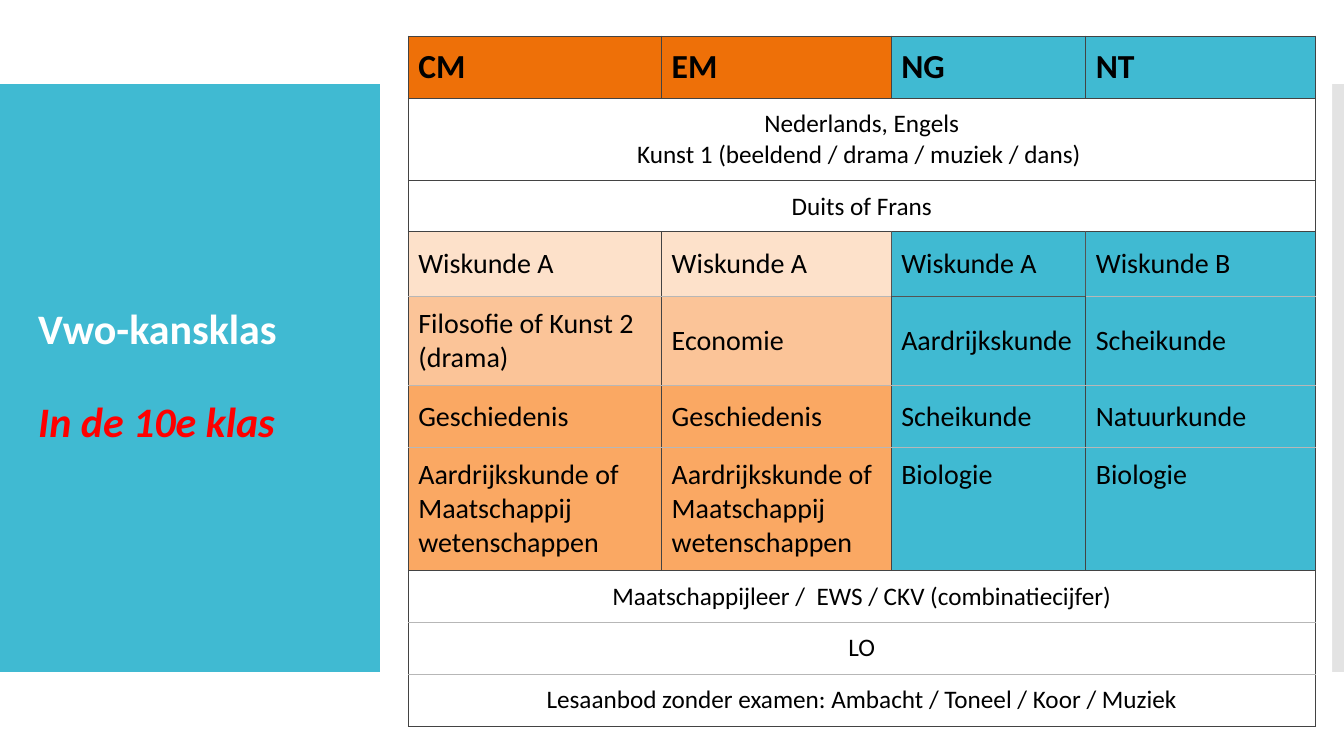
from lxml import etree
from pptx import Presentation
from pptx.dml.color import RGBColor
from pptx.enum.shapes import MSO_SHAPE
from pptx.enum.text import MSO_ANCHOR, MSO_AUTO_SIZE, PP_ALIGN
from pptx.oxml.ns import qn
from pptx.util import Pt

RECTANGLE = MSO_SHAPE.RECTANGLE
TOP, MIDDLE = MSO_ANCHOR.TOP, MSO_ANCHOR.MIDDLE
LEFT, CENTER = PP_ALIGN.LEFT, PP_ALIGN.CENTER
NO_AUTOFIT = MSO_AUTO_SIZE.NONE

DARK, SOFT, PALE = "434343", "545454", "B7B7B7"
TEAL = "40BAD2"


def paint(fill, color, opacity=100):
    fill.solid()
    fill.fore_color.rgb = RGBColor.from_string(color)
    if opacity < 100:
        rgb = fill._xPr.find(".//" + qn("a:srgbClr"))
        etree.SubElement(rgb, qn("a:alpha"), val=str(opacity * 1000))


def write(paragraph, text, size=20, color="000000", bold=False, italic=False, align=LEFT):
    paragraph.alignment = align
    run = paragraph.add_run()
    run.text = text
    run.font.name = "Calibri"
    run.font.size = Pt(size)
    run.font.bold = bold
    run.font.italic = italic
    run.font.color.rgb = RGBColor.from_string(color)


prs = Presentation()
prs.slide_width, prs.slide_height = Pt(960), Pt(540)
slide = prs.slides.add_slide(prs.slide_layouts[5])

panels = [
    (0, 60, 271.3, 420, TEAL, 100),
    (930, 60, 30, 420, "C8C8C8", 50),
    (876, 43, 75.6, 461.5, "FFFFFF", 100),
]
for left, top, width, height, color, opacity in panels:
    panel = slide.shapes.add_shape(RECTANGLE, Pt(left), Pt(top), Pt(width), Pt(height))
    panel.shadow.inherit = False
    panel.line.fill.background()
    paint(panel.fill, color, opacity)

title = slide.shapes.title
title.left, title.top, title.width, title.height = Pt(20), Pt(88.5), Pt(232), Pt(362)
slide.shapes._spTree.append(title.element)
heading = title.text_frame
heading.word_wrap = True
heading.auto_size = NO_AUTOFIT
heading.vertical_anchor = MIDDLE
class_name, class_year = heading.paragraphs[0], heading.add_paragraph()
write(class_name, "Vwo-kansklas", size=30, color="FFFFFF", bold=True)
write(class_year, "In de 10e klas", size=30, color="FF0000", bold=True, italic=True)
class_name.line_spacing = class_year.line_spacing = 0.9
class_year.space_before = Pt(34)

subjects = [
    ["CM", "EM", "NG", "NT"],
    ["Nederlands, Engels\nKunst 1 (beeldend / drama / muziek / dans) "],
    ["Duits of Frans"],
    ["Wiskunde A", "Wiskunde A", "Wiskunde A", "Wiskunde B"],
    ["Filosofie of Kunst 2 (drama)", "Economie", "Aardrijkskunde", "Scheikunde"],
    ["Geschiedenis", "Geschiedenis", "Scheikunde", "Natuurkunde"],
    ["Aardrijkskunde of Maatschappij wetenschappen"] * 2 + ["Biologie"] * 2,
    ["Maatschappijleer /  EWS / CKV (combinatiecijfer)"],
    ["LO"],
    ["Lesaanbod zonder examen: Ambacht / Toneel / Koor / Muziek"],
]
shades = {
    0: [("EE7008", 67), (TEAL, 62)],
    3: [("FDE1CA", 27), (TEAL, 22)],
    4: [("FBC498", 49), (TEAL, 44)],
    5: [("FAA863", 67), (TEAL, 62)],
    6: [("FAA863", 67), (TEAL, 62)],
}
column_widths = [181, 164, 139, 164]
row_heights = [44.5, 59, 36.5, 46, 64, 44, 88, 37, 37, 37]
pale_lines = {4, 5, 6, 8, 9}

table = slide.shapes.add_table(
    len(row_heights), len(column_widths), Pt(291.6), Pt(25.7),
    Pt(sum(column_widths)), Pt(sum(row_heights))).table
table.first_row = False
table.horz_banding = False
for column, width in zip(table.columns, column_widths):
    column.width = Pt(width)
for row, height in zip(table.rows, row_heights):
    row.height = Pt(height)

for r, row_subjects in enumerate(subjects):
    shared = len(row_subjects) == 1
    for c in range(len(column_widths)):
        cell = table.cell(r, c)
        sides = {"L": DARK, "R": DARK}
        if r == 3:
            sides = {"L": SOFT if c in (2, 3) else DARK, "R": SOFT if c in (1, 2) else DARK}
        for side, line in (("T", r), ("B", r + 1)):
            sides[side] = PALE if line in pale_lines else DARK
            if (line, c) == (4, 2):
                sides[side] = SOFT
        properties = cell._tc.get_or_add_tcPr()
        for side, color in sides.items():
            border = etree.SubElement(properties, qn("a:ln" + side), w=str(Pt(0.75)))
            solid = etree.SubElement(border, qn("a:solidFill"))
            etree.SubElement(solid, qn("a:srgbClr"), val=color)
        if shared:
            cell.fill.background()
        else:
            paint(cell.fill, *shades[r][c // 2])
        cell.margin_left = cell.margin_right = Pt(7.2)
        cell.margin_top = cell.margin_bottom = Pt(7.2)
        cell.vertical_anchor = TOP if r == 6 else MIDDLE
    if shared:
        table.cell(r, 0).merge(table.cell(r, len(column_widths) - 1))
    for c, subject in enumerate(row_subjects):
        frame = table.cell(r, c).text_frame
        for i, text in enumerate(subject.split("\n")):
            paragraph = frame.add_paragraph() if i else frame.paragraphs[0]
            if shared:
                write(paragraph, text, size=18, align=CENTER)
            else:
                write(paragraph, text, size=20 if r else 24, bold=r == 0)

prs.save("out.pptx")
